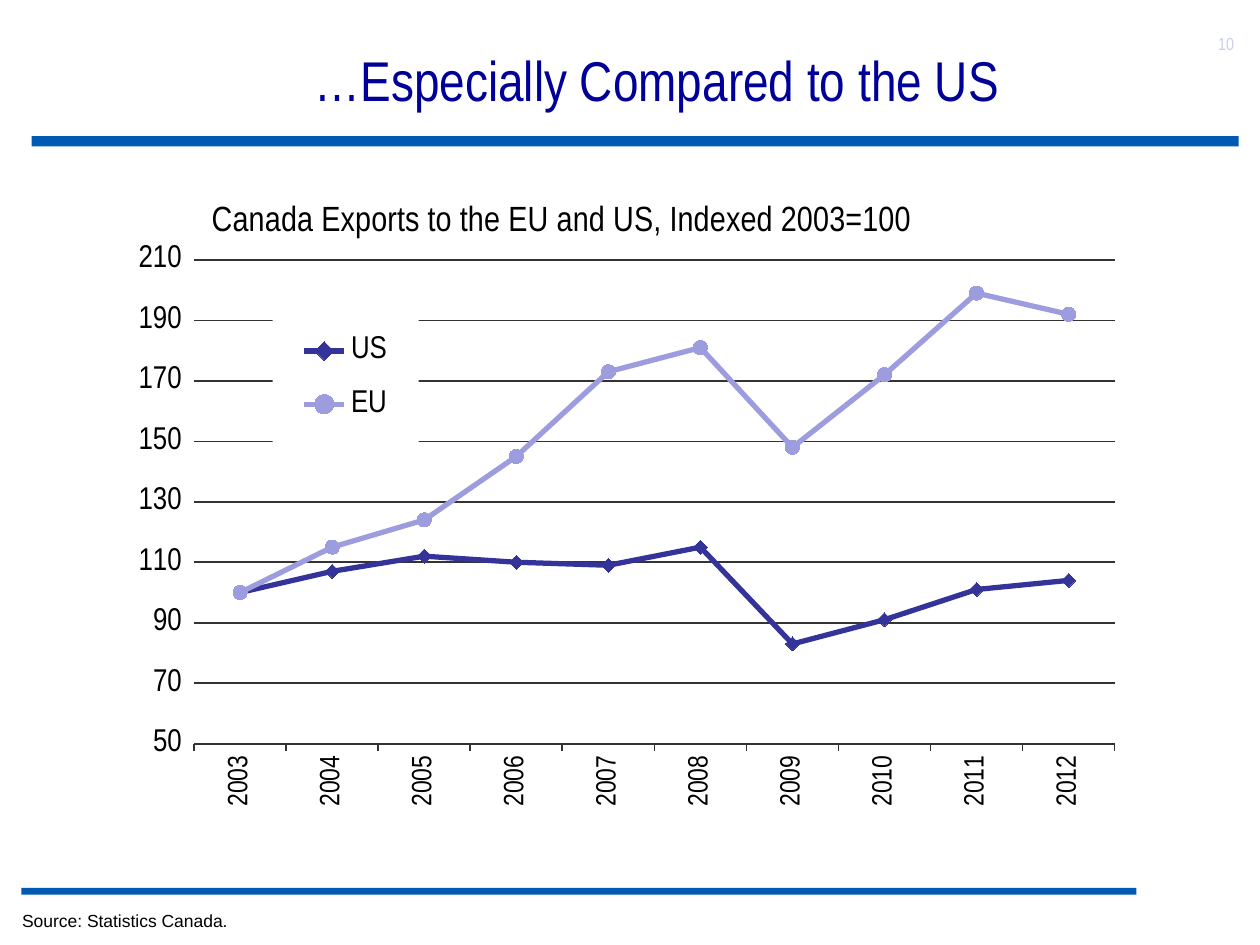
import pptx
import pptx.util
import pptx.dml.color
import pptx.chart.data
import pptx.enum.chart
import pptx.enum.shapes
import pptx.enum.text
import pptx.oxml
import pptx.oxml.ns

Pt = pptx.util.Pt
enums = pptx.enum.chart
qn = pptx.oxml.ns.qn

FACE = "Arial Narrow"
BARS = [(18, 77.76, 689.76, 6), (12.24, 507.4, 637.2, 3.9)]
TEXTS = [
    ("…Especially Compared to the US", (48.24, 12.24, 654.5, 66.2), 32, FACE, "000099", 7.2, True),
    ("Source: Statistics Canada.", (0, 516.24, 491, 19.4), 10, "Arial", "000000", 12.6, False),
    ("10", (689, 15.1, 31, 36), 10, FACE, "C6D0EE", 7.2, False),
]
HEAD = "Canada Exports to the EU and US, Indexed 2003=100"
YEARS = [str(year) for year in range(2003, 2013)]
LINES = [
    ("US", [100, 107, 112, 110, 109, 115, 83, 91, 101, 104], "333399", enums.XL_MARKER_STYLE.DIAMOND),
    ("EU", [100, 115, 124, 145, 173, 181, 148, 172, 199, 192], "9C9CDF", enums.XL_MARKER_STYLE.CIRCLE),
]


def tint(code):
    return pptx.dml.color.RGBColor.from_string(code)


def style(font, size, face=FACE, code="000000"):
    font.size = Pt(size)
    font.name = face
    font.bold = False
    font.color.rgb = tint(code)


def paint(form, code):
    form.fill.solid()
    form.fill.fore_color.rgb = tint(code)


def stroke(line, code, width):
    line.color.rgb = tint(code)
    line.width = Pt(width)


def make(tag, parent, **attrs):
    node = parent.makeelement(qn(tag), attrs)
    parent.append(node)
    return node


def place(node, x, y, w=None, h=None, inner=False):
    for old in node.findall(qn("c:layout")):
        node.remove(old)
    lay = node.makeelement(qn("c:layout"), {})
    man = make("c:manualLayout", lay)
    if inner:
        make("c:layoutTarget", man, val="inner")
    for key in ("xMode", "yMode"):
        make("c:" + key, man, val="edge")
    for key, num in zip("xywh", (x, y, w, h)):
        if num is not None:
            make("c:" + key, man, val=str(num))
    over = node.find(qn("c:overlay"))
    if over is None:
        node.insert(0, lay)
    else:
        over.addprevious(lay)


def add_bar(slide, box):
    bar = slide.shapes.add_shape(pptx.enum.shapes.MSO_SHAPE.RECTANGLE, *map(Pt, box))
    bar.shadow.inherit = False
    paint(bar, "005AB4")
    bar.line.fill.background()


def add_text(slide, text, box, size, face, code, inset, mid):
    frame = slide.shapes.add_textbox(*map(Pt, box)).text_frame
    frame.word_wrap = True
    frame.margin_left = Pt(inset)
    frame.text = text
    para = frame.paragraphs[0]
    style(para.runs[0].font, size, face, code)
    if mid:
        frame.vertical_anchor = pptx.enum.text.MSO_ANCHOR.MIDDLE
        para.alignment = pptx.enum.text.PP_ALIGN.CENTER


def add_graph(slide):
    data = pptx.chart.data.CategoryChartData(number_format="0")
    data.categories = YEARS
    for name, vals, _, _ in LINES:
        data.add_series(name, vals)
    box = map(Pt, (46.8, 103.7, 641.5, 373.7))
    chart = slide.shapes.add_chart(enums.XL_CHART_TYPE.LINE_MARKERS, *box, data).chart
    style(chart.font, 18)
    chart.has_title = True
    title = chart.chart_title
    title.text_frame.text = HEAD
    style(title.text_frame.paragraphs[0].runs[0].font, 20)
    place(title._element, 0.11, 0.02)

    plot = chart.plots[0]
    plot.vary_by_categories = False
    place(chart._chartSpace.chart.plotArea, 0.1, 0.12, 0.82, 0.74, True)
    for series, (_, _, code, mark) in zip(plot.series, LINES):
        series.smooth = False
        stroke(series.format.line, code, 3)
        series.marker.style = mark
        series.marker.size = 8
        paint(series.marker.format, code)
        stroke(series.marker.format.line, code, 0.75)

    base = chart.category_axis
    style(base.tick_labels.font, 16)
    base._element.find(qn("c:txPr")).find(qn("a:bodyPr")).set("rot", "-5400000")
    base.tick_label_position = enums.XL_TICK_LABEL_POSITION.LOW
    base.major_tick_mark = enums.XL_TICK_MARK.OUTSIDE
    stroke(base.format.line, "333333", 0.95)

    side = chart.value_axis
    style(side.tick_labels.font, 18)
    side.tick_labels.number_format = "#,##0"
    side.tick_labels.number_format_is_linked = False
    side.minimum_scale, side.maximum_scale, side.major_unit = 50, 210, 20
    side.major_tick_mark = enums.XL_TICK_MARK.OUTSIDE
    side.format.line.fill.background()
    stroke(side.major_gridlines.format.line, "333333", 0.95)

    chart.has_legend = True
    key = chart.legend
    key.position = enums.XL_LEGEND_POSITION.RIGHT
    key.include_in_layout = False
    style(key.font, 18)
    node = key._element
    place(node, 0.17, 0.2, 0.13, 0.2)
    back = node.makeelement(qn("c:spPr"), {})
    make("a:srgbClr", make("a:solidFill", back), val="FFFFFF")
    node.find(qn("c:overlay")).addnext(back)


def main():
    deck = pptx.Presentation()
    deck.slide_width, deck.slide_height = Pt(720), Pt(540)
    slide = deck.slides.add_slide(deck.slide_layouts[6])
    for box in BARS:
        add_bar(slide, box)
    for item in TEXTS:
        add_text(slide, *item)
    add_graph(slide)
    deck.save("out.pptx")


if __name__ == "__main__":
    main()
